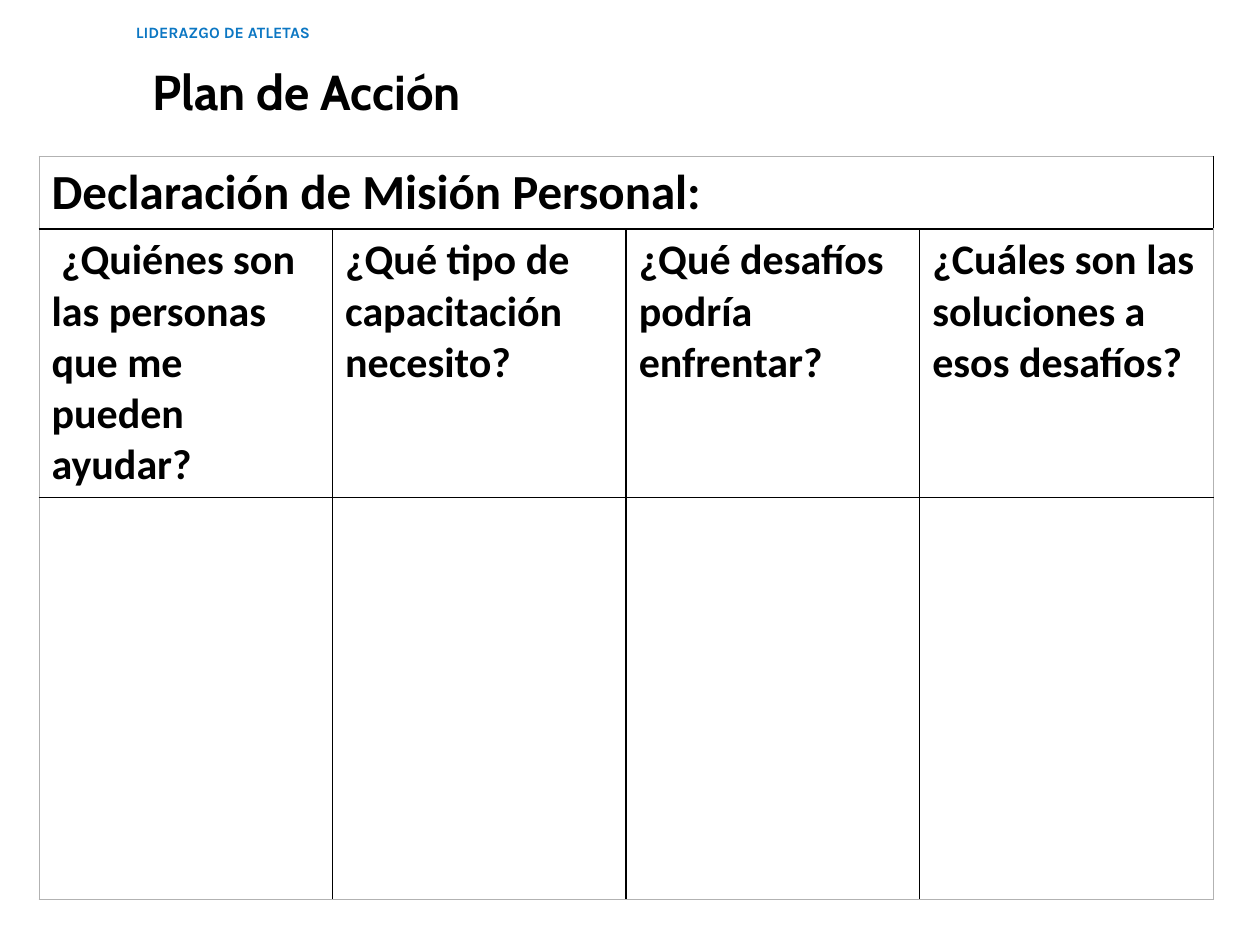
from lxml import etree
from pptx import Presentation
from pptx.dml.color import RGBColor
from pptx.enum.text import MSO_ANCHOR, PP_ALIGN
from pptx.oxml.ns import qn
from pptx.util import Inches, Pt

LEFT = PP_ALIGN.LEFT
TOP = MSO_ANCHOR.TOP
COLORS = {"text": "000000", "accent": "0C77C3", "background": "FFFFFF", "frame": "B2B2B2"}
HEADING = "Declaración de Misión Personal:"
QUESTIONS = [
    " ¿Quiénes son las personas que me pueden ayudar?",
    "¿Qué tipo de capacitación necesito?",
    "¿Qué desafíos podría enfrentar?",
    "¿Cuáles son las soluciones a esos desafíos?",
]
ROW_HEIGHTS = [0.57, 2.13, 3.19]
COLUMN_WIDTH = 2.33


def add_text(text_frame, text, size, font_name, color):
    paragraph = text_frame.paragraphs[0]
    paragraph.alignment = LEFT
    run = paragraph.add_run()
    run.text = text
    run.font.size = Pt(size)
    run.font.name = font_name
    run.font.bold = True
    run.font.color.rgb = RGBColor.from_string(COLORS[color])
    return paragraph


def set_borders(cell, borders):
    properties = cell._tc.get_or_add_tcPr()
    for position, (side, color, width) in enumerate(borders):
        line = etree.Element(qn(f"a:ln{side}"), w=str(Pt(width)))
        fill = etree.SubElement(line, qn("a:solidFill"))
        etree.SubElement(fill, qn("a:srgbClr"), val=COLORS[color])
        properties.insert(position, line)


presentation = Presentation()
presentation.slide_width = Inches(10)
presentation.slide_height = Inches(7.5)
slide = presentation.slides.add_slide(presentation.slide_layouts[5])
slide.background.fill.solid()
slide.background.fill.fore_color.rgb = RGBColor.from_string(COLORS["background"])

title = slide.shapes.title
title.left, title.top = Inches(1.11), Inches(0.49)
title.width, title.height = Inches(6.51), Inches(0.32)
title.text_frame.vertical_anchor = TOP
title.text_frame.word_wrap = True
title_paragraph = add_text(title.text_frame, "Plan de Acción", 28, "Cabin", "text")
title_paragraph.line_spacing = 0.9

column_count = len(QUESTIONS)
row_count = len(ROW_HEIGHTS)
table = slide.shapes.add_table(
    row_count, column_count, Inches(0.31), Inches(1.24),
    Inches(COLUMN_WIDTH * column_count), Inches(sum(ROW_HEIGHTS)),
).table
table.first_row = False
table.horz_banding = False
for column in table.columns:
    column.width = Inches(COLUMN_WIDTH)
for row, height in zip(table.rows, ROW_HEIGHTS):
    row.height = Inches(height)

for row_index in range(row_count):
    for column_index in range(column_count):
        cell = table.cell(row_index, column_index)
        cell.fill.background()
        at_edge = {
            "L": column_index == 0,
            "R": column_index == column_count - 1,
            "T": row_index == 0,
            "B": row_index == row_count - 1,
        }
        set_borders(cell, [
            (side, "frame" if outer else "text", 0.5 if outer else 1)
            for side, outer in at_edge.items()
        ])

heading_cell = table.cell(0, 0)
heading_cell.merge(table.cell(0, column_count - 1))
add_text(heading_cell.text_frame, HEADING, 28, "Calibri", "text")
for column_index, question in enumerate(QUESTIONS):
    add_text(table.cell(1, column_index).text_frame, question, 24, "Calibri", "text")

section_label = slide.shapes.add_textbox(Inches(0.98), Inches(0.13), Inches(1.76), Inches(0.25))
section_label.text_frame.word_wrap = False
add_text(section_label.text_frame, "LIDERAZGO DE ATLETAS", 9, "Karla", "accent")

presentation.save("out.pptx")
